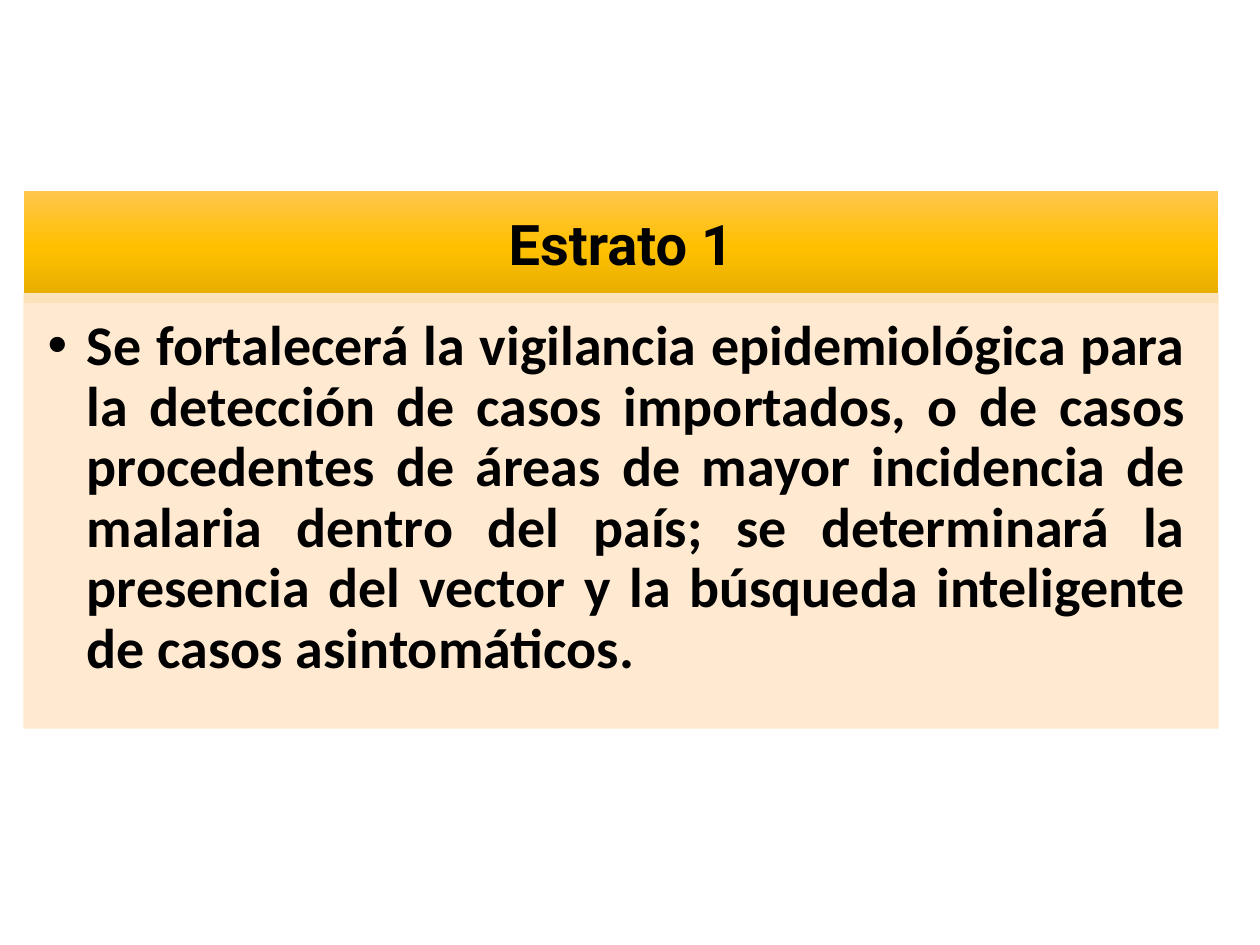
"""Build the slide on the surveillance actions of stratum 1."""
from dataclasses import dataclass

from lxml.etree import SubElement as Sub
from pptx import Presentation as Deck
from pptx.dml.color import RGBColor as Rgb
from pptx.enum.text import MSO_ANCHOR as Anchor, MSO_AUTO_SIZE as Fit, PP_ALIGN as Align
from pptx.oxml.ns import qn
from pptx.util import Cm, Pt

HUES = {"light": "FFC64B", "gold": "FFC000", "dark": "E3AB00",
        "cream": "FFE8CC", "ink": "000000"}
LEFT, WIDTH = 0.48, 24.08


@dataclass
class Panel:
    """Place and text style of one panel, with lengths in cm."""
    top: float
    height: float
    pads: tuple[float, float, float, float]
    text: str
    face: str
    align: Align
    anchor: Anchor
    after: float
    level: int = 0


HEAD = Panel(3.86, 2.24, (0.64, 0.36, 0.64, 0.36), "Estrato 1", "Roboto",
             Align.CENTER, Anchor.MIDDLE, 11)
BODY = Panel(5.92, 8.76, (0.48, 0.48, 0.64, 0.71),
             "Se fortalecerá la vigilancia epidemiológica para la detección de casos "
             "importados, o de casos procedentes de áreas de mayor incidencia de malaria "
             "dentro del país; se determinará la presencia del vector y la búsqueda "
             "inteligente de casos asintomáticos.",
             "Calibri", Align.JUSTIFY, Anchor.TOP, 5, 1)


def bullet(para) -> None:
    """Give a paragraph a round bullet with a hanging indent."""
    props = para._p.get_or_add_pPr()
    props.set("marL", str(Cm(0.79)))
    props.set("indent", str(Cm(-0.79)))
    Sub(props, qn("a:buFont"), typeface="Arial")
    Sub(props, qn("a:buChar"), char="•")


def write(shape, panel: Panel) -> None:
    """Place a placeholder and write the text of its panel."""
    shape.left, shape.top = Cm(LEFT), Cm(panel.top)
    shape.width, shape.height = Cm(WIDTH), Cm(panel.height)
    frame = shape.text_frame
    frame.auto_size, frame.word_wrap = Fit.NONE, True
    frame.vertical_anchor = panel.anchor
    (frame.margin_left, frame.margin_top,
     frame.margin_right, frame.margin_bottom) = map(Cm, panel.pads)
    para = frame.paragraphs[0]
    para.level = panel.level
    if panel.level:
        bullet(para)
    para.alignment, para.line_spacing = panel.align, 0.9
    para.space_before, para.space_after = Pt(0), Pt(panel.after)
    run = para.add_run()
    run.text = panel.text
    font = run.font
    font.name, font.size, font.bold = panel.face, Pt(32), True
    font.color.rgb = Rgb.from_string(HUES["ink"])


def shade(shape, hues: list[str]) -> None:
    """Fill a shape from top to bottom with evenly spaced hues."""
    shape.fill.gradient()
    shape.fill.gradient_angle = 270
    stops = shape._element.spPr.find(".//" + qn("a:gsLst"))
    stops.clear()
    for i, hue in enumerate(hues):
        stop = Sub(stops, qn("a:gs"), pos=str(100000 * i // (len(hues) - 1)))
        Sub(stop, qn("a:srgbClr"), val=HUES[hue])


def tint(shape, hue: str) -> None:
    """Give a shape a slightly clear fill and line of one hue."""
    shape.fill.solid()
    shape.line.width = Pt(0.5)
    for fill in (shape.fill, shape.line.fill):
        fill.solid()
        fill.fore_color.rgb = Rgb.from_string(HUES[hue])
    for node in shape._element.spPr.iter(qn("a:srgbClr")):
        Sub(node, qn("a:alpha"), val="90000")


def main() -> None:
    """Build and save the deck."""
    deck = Deck()
    deck.slide_width, deck.slide_height = Cm(25.4), Cm(19.05)
    slide = deck.slides.add_slide(deck.slide_layouts[1])
    title, body = slide.placeholders
    write(title, HEAD)
    shade(title, ["light", "gold", "dark"])
    write(body, BODY)
    tint(body, "cream")
    deck.save("out.pptx")


if __name__ == "__main__":
    main()
